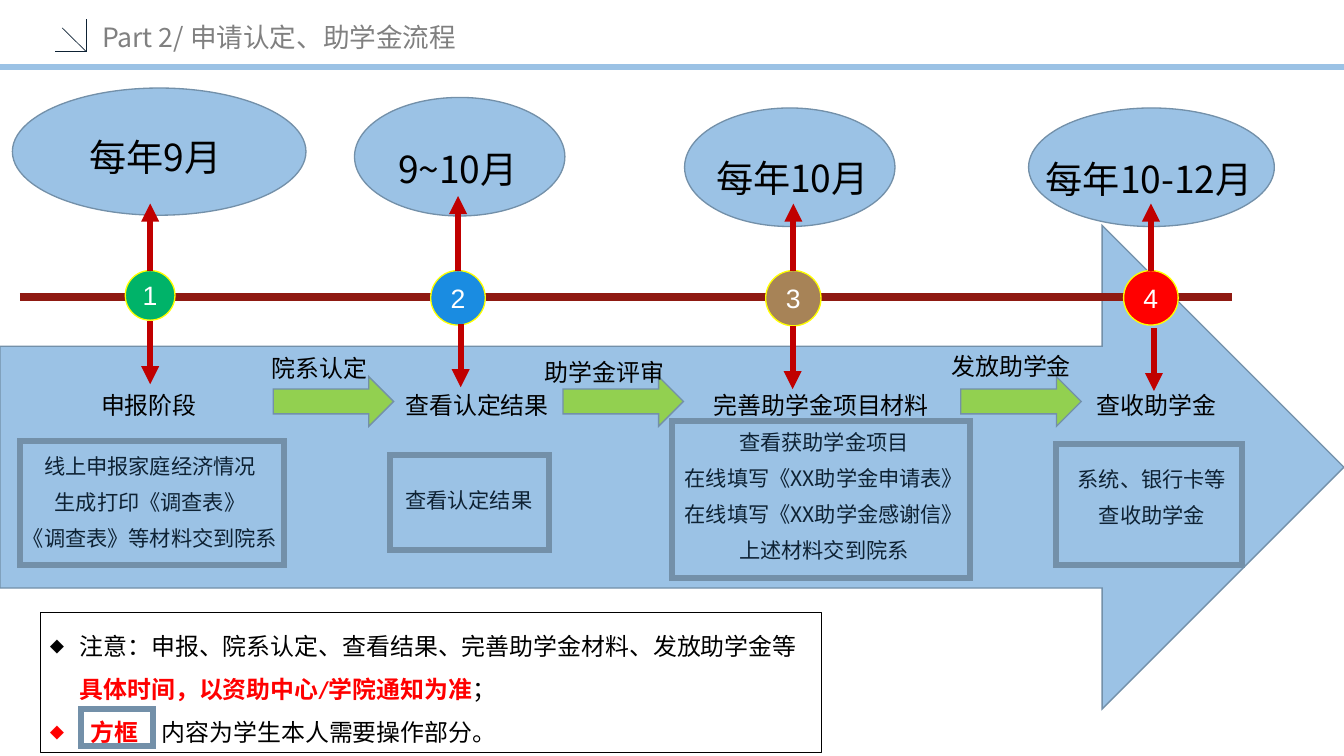
"""Build the slide on the yearly grant application process."""
from lxml.etree import SubElement
from pptx import Presentation
from pptx.dml.color import RGBColor
from pptx.enum.shapes import MSO_CONNECTOR as Link, MSO_SHAPE as Shape
from pptx.enum.text import MSO_ANCHOR as Anchor, MSO_AUTO_SIZE as Fit, PP_ALIGN as Align
from pptx.oxml.ns import qn
from pptx.util import Cm, Pt

SKY = RGBColor(0x9B, 0xC2, 0xE5)
STEEL = RGBColor(0x73, 0x90, 0xA9)
NAVY = RGBColor(0x0E, 0x22, 0x34)
GRAY = RGBColor(0x80, 0x80, 0x80)
BLACK = RGBColor(0, 0, 0)
WHITE = RGBColor(0xFF, 0xFF, 0xFF)
RED = RGBColor(0xFF, 0, 0)
CRIMSON = RGBColor(0xC0, 0, 0)
BRICK = RGBColor(0x8F, 0x1A, 0x12)
YELLOW = RGBColor(0xFF, 0xFF, 0)
LIME = RGBColor(0x92, 0xD0, 0x50)
GREEN = RGBColor(0, 0xB3, 0x69)
BLUE = RGBColor(0x1A, 0x8C, 0xE1)
BROWN = RGBColor(0xA7, 0x83, 0x57)

WIDTH, HEIGHT = 35.71, 20.09


class Board:
    """Hold the style and the current slide."""

    font = "Noto Sans CJK SC"

    def __init__(self, deck):
        self.slide = deck.slides.add_slide(deck.slide_layouts[1])
        self.shapes = self.slide.shapes

    def style(self, run, size, color, name=None, bold=False):
        font = run.font
        font.size, font.bold, font.name = Pt(size), bold, name or self.font
        font.color.rgb = color
        SubElement(run._r.get_or_add_rPr(), qn("a:ea")).set("typeface", self.font)

    def place(self, item, box):
        item.left, item.top, item.width, item.height = map(Cm, box)

    def title(self, box, text):
        item = self.shapes.title
        self.place(item, box)
        frame = item.text_frame
        frame.text = text
        frame.auto_size, frame.vertical_anchor = Fit.NONE, Anchor.MIDDLE
        frame.paragraphs[0].alignment = Align.LEFT
        self.style(frame.paragraphs[0].runs[0], 20, GRAY)

    def shape(self, kind, box, fill=None, line=STEEL, weight=1):
        item = self.shapes.add_shape(kind, *map(Cm, box))
        item.shadow.inherit = False
        if fill is None:
            item.fill.background()
        else:
            item.fill.solid()
            item.fill.fore_color.rgb = fill
        item.line.color.rgb, item.line.width = line, Pt(weight)
        SubElement(item.line._get_or_add_ln(), qn("a:miter")).set("lim", "800000")
        return item

    def badge(self, mid, top, size, text, fill):
        item = self.shape(Shape.OVAL, (mid - size / 2, top, size, size), fill, YELLOW)
        frame = item.text_frame
        frame.margin_left = frame.margin_right = frame.margin_top = frame.margin_bottom = 0
        frame.text = text
        frame.vertical_anchor = Anchor.MIDDLE
        frame.paragraphs[0].alignment = Align.CENTER
        self.style(frame.paragraphs[0].runs[0], 20, WHITE, "Arial")

    def text(self, box, text, size=18, color=BLACK, space=1.0, before=0, hang=0):
        frame = self.shapes.add_textbox(*map(Cm, box)).text_frame
        frame.word_wrap = True
        frame.text = text
        for para in frame.paragraphs:
            para.alignment = Align.CENTER
            para.line_spacing, para.space_before = space, Pt(before)
            if hang:
                self.indent(para, hang)
            self.style(para.runs[0], size, color)

    def indent(self, para, size):
        props = para._p.get_or_add_pPr()
        props.set("marL", str(Cm(size)))
        props.set("indent", str(-Cm(size)))
        return props

    def line(self, start, end, color, weight, arrow=False):
        item = self.shapes.add_connector(Link.STRAIGHT, *map(Cm, start + end))
        item.line.color.rgb, item.line.width = color, Pt(weight)
        if arrow:
            SubElement(item.line._get_or_add_ln(), qn("a:tailEnd")).set("type", "triangle")
        SubElement(item._element.spPr, qn("a:effectLst"))

    def notes(self, box, rows):
        item = self.slide.placeholders[1]
        self.place(item, box)
        item.fill.solid()
        item.fill.fore_color.rgb = WHITE
        item.line.color.rgb, item.line.width = BLACK, Pt(1)
        frame = item.text_frame
        frame.text = "\n".join("" for _ in rows)
        frame.auto_size, frame.vertical_anchor = Fit.NONE, Anchor.TOP
        for para, (hang, parts) in zip(frame.paragraphs, rows):
            para.line_spacing, para.space_before = 1.5, Pt(0)
            props = self.indent(para, hang)
            SubElement(props, qn("a:buSzPct")).set("val", "60000")
            SubElement(props, qn("a:buFont")).set("typeface", self.font)
            SubElement(props, qn("a:buChar")).set("char", "◆")
            for text, key in parts:
                run = para.add_run()
                run.text = text
                self.style(run, 18, RED if key else BLACK, "Calibri", key)


OVALS = [(27.33, 2.87, 6.53, 3.15), (18.19, 2.87, 5.59, 3.15),
         (9.42, 2.59, 5.59, 3.15), (0.33, 2.34, 7.8, 3.38)]
BADGES = [(3.99, 1.32, GREEN), (12.17, 1.45, BLUE), (21.08, 1.47, BROWN), (30.58, 1.45, RED)]
TIPS = [5.41, 5.21, 5.41, 5.41]
DROPS = [(3.99, 8.53), (12.24, 8.61), (21.06, 8.66), (30.66, 8.71)]
DATES = [(0.3, 2.84, "每年9月"), (8.33, 3.18, "9~10月"),
         (17.22, 3.4, "每年10月"), (26.7, 3.43, "每年10-12月")]
STAGES = [(1.96, 3.99, "申报阶段"), (10.34, 4.67, "查看认定结果"),
          (18.67, 6.3, "完善助学金项目材料"), (28.73, 3.99, "查收助学金")]
FRAMES = [(0.53, 11.71, 7.01, 3.3), (10.36, 12.09, 4.24, 2.54), (17.86, 11.2, 7.92, 4.17),
          (28.07, 11.81, 4.93, 3.2), (2.16, 18.85, 1.91, 0.97)]
TASKS = [
    ((-0.53, 11.99, 9.04, 3.02), 0.64,
     ["线上申报家庭经济情况", "生成打印《调查表》", "《调查表》等材料交到院系"]),
    ((10.34, 12.9, 4.24, 1.09), 0, ["查看认定结果"]),
    ((17.88, 11.35, 8.03, 2.84), 0,
     ["查看获助学金项目", "在线填写《XX助学金申请表》",
      "在线填写《XX助学金感谢信》", "上述材料交到院系"]),
    ((28.27, 12.34, 4.67, 2.21), 0, ["系统、银行卡等", "查收助学金"]),
]
MOVES = [(7.26, 6.91, 8.89, 3.15, "院系认定"), (14.96, 14.07, 8.99, 3.99, "助学金评审"),
         (25.53, 24.87, 8.84, 3.99, "发放助学金")]
NOTES = [
    (0.79, [("注意：申报、院系认定、查看结果、完善助学金材料、发放助学金等", False),
            ("具体时间，以资助中心/学院通知为准", True), ("；", False)]),
    (1.07, [("方框", True), ("　内容为学生本人需要操作部分。", False)]),
]


def main():
    deck = Presentation()
    deck.slide_width, deck.slide_height = Cm(WIDTH), Cm(HEIGHT)
    board = Board(deck)
    board.title((2.46, 0.38, 10.44, 1.19), "Part 2/ 申请认定、助学金流程")
    board.notes((1.07, 16.28, 20.75, 3.71), NOTES)

    board.line((0, 1.78), (WIDTH, 1.78), SKY, 4.5)
    for end in [(1.45, 1.37), (2.29, 0.51), (1.65, 0.74)]:
        board.line((2.29, 1.37), end, NAVY, 0.5)

    for box in OVALS:
        board.shape(Shape.OVAL, box, SKY)
    board.shape(Shape.RIGHT_ARROW, (0, 5.99, WIDTH, 12.85), SKY)
    board.line((0.53, 7.9), (32.74, 7.9), BRICK, 6)

    for box, hang, rows in TASKS:
        board.text(box, "\n".join(rows), 16, NAVY, 0.9, 10, hang)
    for num, (mid, size, fill) in enumerate(BADGES, 1):
        board.badge(mid, 7.19, size, str(num), fill)
    for left, width, text in STAGES:
        board.text((left, 10.26, width, 1.02), text)
    for box in FRAMES:
        board.shape(Shape.RECTANGLE, box, weight=4.5)

    for left, start, top, width, text in MOVES:
        board.shape(Shape.RIGHT_ARROW, (left, 10.01, 3.2, 1.32), LIME)
        board.text((start, top, width, 1.27), text, space=1.5)
    for x, y in DROPS:
        board.line((x, y), (x, y + 1.68), CRIMSON, 4.5, True)
    for (mid, _, _), tip in zip(BADGES, TIPS):
        board.line((mid, 7.19), (mid, tip), CRIMSON, 4.5, True)
    for left, top, text in DATES:
        board.text((left, top, 7.67, 1.83), text, 28, space=1.5)
    deck.save("out.pptx")


if __name__ == "__main__":
    main()
